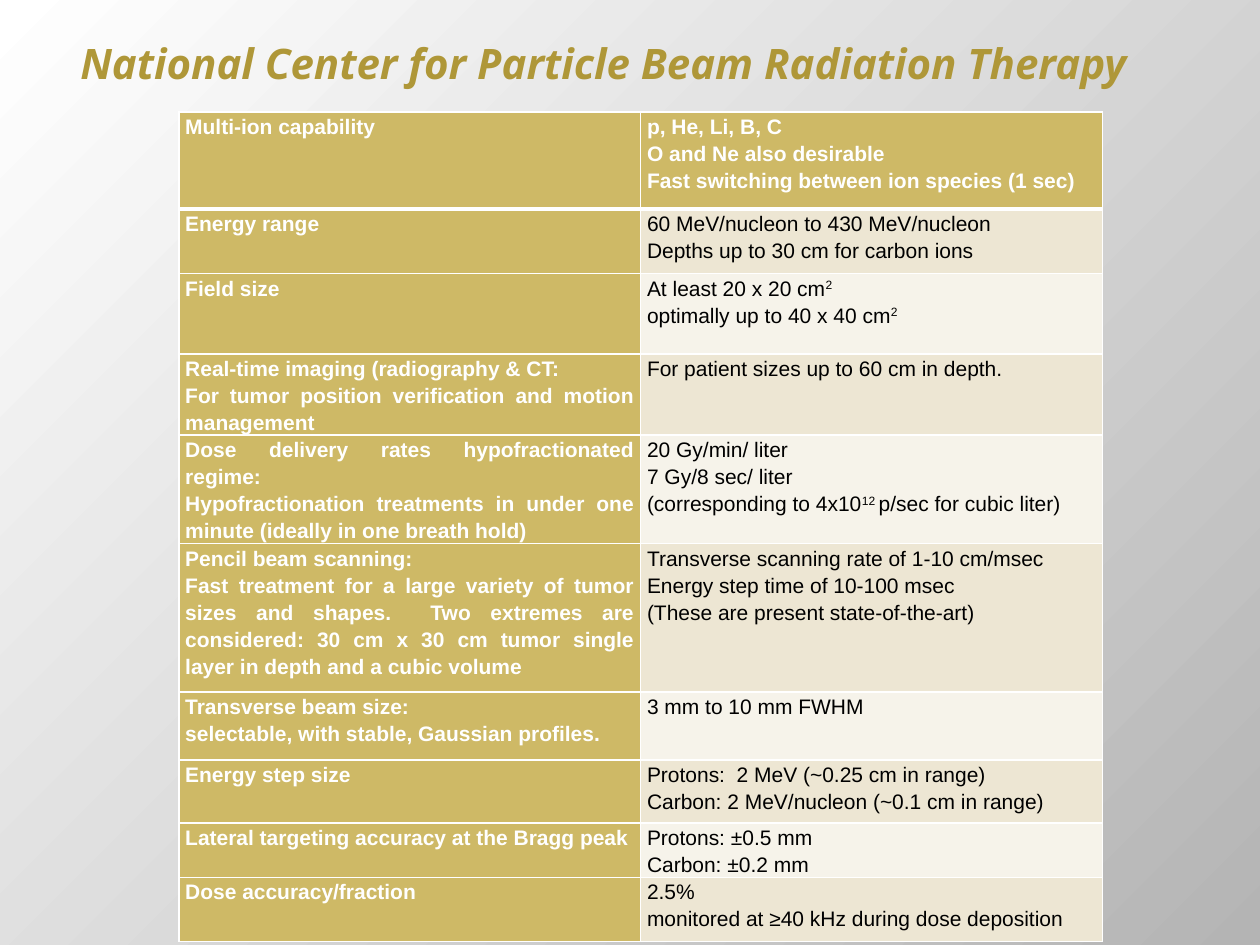
from lxml.etree import SubElement
from pptx import Presentation
from pptx.dml.color import RGBColor
from pptx.enum.text import MSO_ANCHOR, PP_ALIGN
from pptx.oxml.ns import qn
from pptx.util import Inches, Pt

COLORS = {
    "white": "FFFFFF",
    "grey": "B4B4B4",
    "gold": "CEB966",
    "title": "AF9738",
    "black": "000000",
    "dark_band": "EDE6D3",
    "light_band": "F6F3EA",
}
ROW_HEIGHTS = [0.77, 0.51, 0.64, 0.64, 0.86, 1.18, 0.54, 0.5, 0.43, 0.51]
REQUIREMENTS = [
    (["Multi-ion capability"],
     ["p, He, Li, B, C", "O and Ne also desirable",
      "Fast switching between ion species (1 sec)"]),
    (["Energy range"],
     ["60 MeV/nucleon to 430 MeV/nucleon", "Depths up to 30 cm for carbon ions"]),
    (["Field size"],
     ["At least 20 x 20 cm^2", "optimally up to 40 x 40 cm^2"]),
    (["Real-time imaging (radiography & CT:",
      "For tumor position verification and motion management"],
     ["For patient sizes up to 60 cm in depth."]),
    (["Dose delivery rates hypofractionated regime:",
      "Hypofractionation treatments in under one minute (ideally in one breath hold)"],
     ["20 Gy/min/ liter", "7 Gy/8 sec/ liter",
      "(corresponding to 4x10^12 ^p/sec for cubic liter)"]),
    (["Pencil beam scanning:",
      "Fast treatment for a large variety of tumor sizes and shapes.  Two extremes "
      "are considered: 30 cm x 30 cm tumor single layer in depth and a cubic volume"],
     ["Transverse scanning rate of 1-10 cm/msec", "Energy step time of 10-100 msec",
      "(These are present state-of-the-art)"]),
    (["Transverse beam size:", "selectable, with stable, Gaussian profiles."],
     ["3 mm to 10 mm FWHM"]),
    (["Energy step size"],
     ["Protons:  2 MeV (~0.25 cm in range)",
      "Carbon: 2 MeV/nucleon (~0.1 cm in range)"]),
    (["Lateral targeting accuracy at the Bragg peak"],
     ["Protons: ±0.5 mm", "Carbon: ±0.2 mm"]),
    (["Dose accuracy/fraction"],
     ["2.5%", "monitored at ≥40 kHz during dose deposition"]),
]


def rgb(name):
    """Return the named colour."""
    return RGBColor.from_string(COLORS[name])


def paint_background(slide):
    """Shade the slide from a white top left corner to grey."""
    fill = slide.background.fill
    fill.gradient()
    for stop, color, position in zip(fill.gradient_stops, ("white", "grey"), (0, 1)):
        stop.color.rgb = rgb(color)
        stop.position = position
    linear = slide.element.find(".//" + qn("a:lin"))
    gradient = linear.getparent()
    gradient.remove(linear)
    radial = SubElement(gradient, qn("a:path"))
    radial.set("path", "circle")
    focus = SubElement(radial, qn("a:fillToRect"))
    focus.set("r", "100000")
    focus.set("b", "100000")


def place_title(slide, left, top, width, height):
    """Place and format the slide title."""
    title = slide.shapes.title
    title.left, title.top, title.width, title.height = left, top, width, height
    frame = title.text_frame
    frame.word_wrap = True
    frame.vertical_anchor = MSO_ANCHOR.MIDDLE
    paragraph = frame.paragraphs[0]
    paragraph.alignment = PP_ALIGN.CENTER
    run = paragraph.add_run()
    run.text = "National Center for Particle Beam Radiation Therapy"
    run.font.name, run.font.size = "Open Sans", Pt(24)
    run.font.bold = run.font.italic = True
    run.font.color.rgb = rgb("title")


def draw_borders(cell, top_width, bottom_width):
    """Draw white borders around a cell."""
    properties = cell._tc.get_or_add_tcPr()
    widths = {"lnL": 1, "lnR": 1, "lnT": top_width, "lnB": bottom_width}
    for side, width in widths.items():
        border = SubElement(properties, qn(f"a:{side}"))
        border.set("w", str(Pt(width)))
        solid = SubElement(border, qn("a:solidFill"))
        SubElement(solid, qn("a:srgbClr")).set("val", COLORS["white"])


def write_cell(cell, lines, color, bold):
    """Write justified lines, raising every second part split off by a caret."""
    cell.margin_left = cell.margin_right = Inches(0.05)
    cell.margin_top = cell.margin_bottom = 0
    frame = cell.text_frame
    for index, line in enumerate(lines):
        paragraph = frame.add_paragraph() if index else frame.paragraphs[0]
        paragraph.alignment = PP_ALIGN.JUSTIFY
        paragraph.line_spacing = 1.15
        for part_index, part in enumerate(line.split("^")):
            run = paragraph.add_run()
            run.text = part
            run.font.name, run.font.size = "Arial", Pt(12)
            run.font.bold = bold
            run.font.color.rgb = rgb(color)
            if part_index % 2:
                run.font._element.set("baseline", "30000")


def place_requirements(slide, left, top, width, height):
    """Place the table of machine requirements."""
    table = slide.shapes.add_table(
        len(REQUIREMENTS), 2, left, top, width, height).table
    for column in table.columns:
        column.width = width // 2
    for row_index, requirement in enumerate(REQUIREMENTS):
        table.rows[row_index].height = Inches(ROW_HEIGHTS[row_index])
        band = "dark_band" if row_index % 2 else "light_band"
        for column_index, lines in enumerate(requirement):
            cell = table.cell(row_index, column_index)
            heading = row_index == 0 or column_index == 0
            draw_borders(cell, 3 if row_index == 1 else 1, 3 if row_index == 0 else 1)
            cell.fill.solid()
            cell.fill.fore_color.rgb = rgb("gold" if heading else band)
            write_cell(cell, lines, "white" if heading else "black", heading)


def main():
    """Build and save the slide."""
    presentation = Presentation()
    presentation.slide_width, presentation.slide_height = Inches(10), Inches(7.5)
    slide = presentation.slides.add_slide(presentation.slide_layouts[5])
    paint_background(slide)
    place_requirements(slide, Inches(1.42), Inches(0.89), Inches(7.33),
                       Inches(sum(ROW_HEIGHTS)))
    place_title(slide, Inches(0.08), Inches(0.08), Inches(9.42), Inches(0.83))
    presentation.save("out.pptx")


if __name__ == "__main__":
    main()
